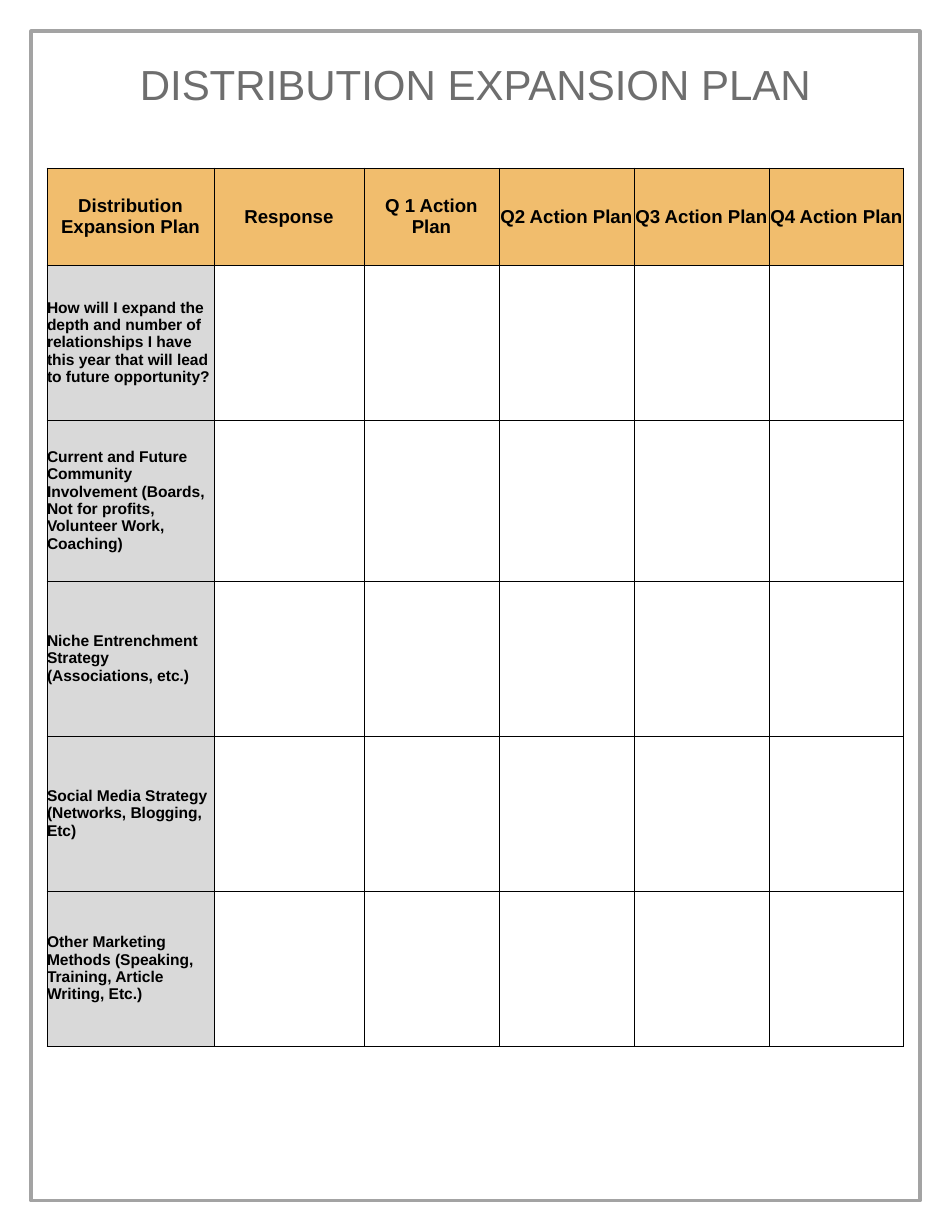
from lxml.etree import SubElement
from pptx import Presentation
from pptx.dml.color import RGBColor
from pptx.enum.shapes import MSO_SHAPE
from pptx.enum.text import MSO_ANCHOR, PP_ALIGN
from pptx.oxml.ns import qn
from pptx.util import Inches, Pt

PX = Inches(1) // 112
FONT = "Arial"
BLACK = RGBColor(0x00, 0x00, 0x00)
TITLE_GRAY = RGBColor(0x6E, 0x6E, 0x6E)
FRAME_GRAY = RGBColor(0xA3, 0xA3, 0xA3)
HEADER_ORANGE = RGBColor(0xF1, 0xBD, 0x6D)
TOPIC_GRAY = RGBColor(0xD9, 0xD9, 0xD9)

HEADINGS = [
    "Distribution Expansion Plan",
    "Response",
    "Q 1 Action Plan",
    "Q2 Action Plan",
    "Q3 Action Plan",
    "Q4 Action Plan",
]
TOPICS = [
    "How will I expand the depth and number of relationships I have this year "
    "that will lead to future opportunity?",
    "Current and Future Community Involvement (Boards, Not for profits, "
    "Volunteer Work, Coaching)",
    "Niche Entrenchment Strategy (Associations, etc.)",
    "Social Media Strategy (Networks, Blogging, Etc)",
    "Other Marketing Methods (Speaking, Training, Article Writing, Etc.)",
]
COLUMN_WIDTHS = [167, 150] + [135] * 4
ROW_HEIGHTS = [97, 155, 161, 155, 155, 155]


def emu(*lengths):
    return [length * PX for length in lengths]


def write(paragraph, text, size, color, bold, align):
    paragraph.alignment = align
    run = paragraph.add_run()
    run.text = text
    run.font.name = FONT
    run.font.size = Pt(size)
    run.font.bold = bold
    run.font.color.rgb = color


def add_frame(slide, left, top, width, height):
    frame = slide.shapes.add_shape(
        MSO_SHAPE.RECTANGLE, *emu(left, top, width, height))
    frame.shadow.inherit = False
    frame.fill.background()
    frame.line.color.rgb = FRAME_GRAY
    frame.line.width = Pt(2)
    SubElement(frame.line._get_or_add_ln(), qn("a:round"))


def add_title(slide, left, top, width, height):
    title = slide.shapes.add_textbox(*emu(left, top, width, height)).text_frame
    title.word_wrap = True
    title.vertical_anchor = MSO_ANCHOR.TOP
    title.margin_top = 10 * PX
    write(title.paragraphs[0], "DISTRIBUTION EXPANSION PLAN", 27, TITLE_GRAY,
          False, PP_ALIGN.CENTER)


def add_borders(cell):
    properties = cell._tc.get_or_add_tcPr()
    for position, side in enumerate(("lnL", "lnR", "lnT", "lnB")):
        border = SubElement(properties, qn(f"a:{side}"), w=str(Pt(0.5)))
        fill = SubElement(border, qn("a:solidFill"))
        SubElement(fill, qn("a:srgbClr"), val=str(BLACK))
        properties.insert(position, border)


def fill_cell(cell, text, size, color, align):
    cell.fill.solid()
    cell.fill.fore_color.rgb = color
    write(cell.text_frame.paragraphs[0], text, size, BLACK, True, align)


def add_plan(slide, left, top):
    plan = slide.shapes.add_table(
        len(ROW_HEIGHTS), len(COLUMN_WIDTHS),
        *emu(left, top, sum(COLUMN_WIDTHS), sum(ROW_HEIGHTS))).table
    plan.first_row = plan.horz_banding = False
    for column, width in zip(plan.columns, COLUMN_WIDTHS):
        column.width = width * PX
    for row, height in zip(plan.rows, ROW_HEIGHTS):
        row.height = height * PX
    for cell in plan.iter_cells():
        cell.margin_left = cell.margin_right = 0
        cell.margin_top = cell.margin_bottom = 0
        cell.vertical_anchor = MSO_ANCHOR.MIDDLE
        cell.fill.background()
        add_borders(cell)
    for column, heading in enumerate(HEADINGS):
        fill_cell(plan.cell(0, column), heading, 12, HEADER_ORANGE,
                  PP_ALIGN.CENTER)
    for row, topic in enumerate(TOPICS, start=1):
        fill_cell(plan.cell(row, 0), topic, 10, TOPIC_GRAY, PP_ALIGN.LEFT)


def main():
    presentation = Presentation()
    presentation.slide_width = Inches(8.5)
    presentation.slide_height = Inches(11)
    slide = presentation.slides.add_slide(presentation.slide_layouts[6])
    add_frame(slide, 31, 31, 889, 1170)
    add_title(slide, 47, 49, 857, 115)
    add_plan(slide, 47, 168)
    presentation.save("out.pptx")


if __name__ == "__main__":
    main()
